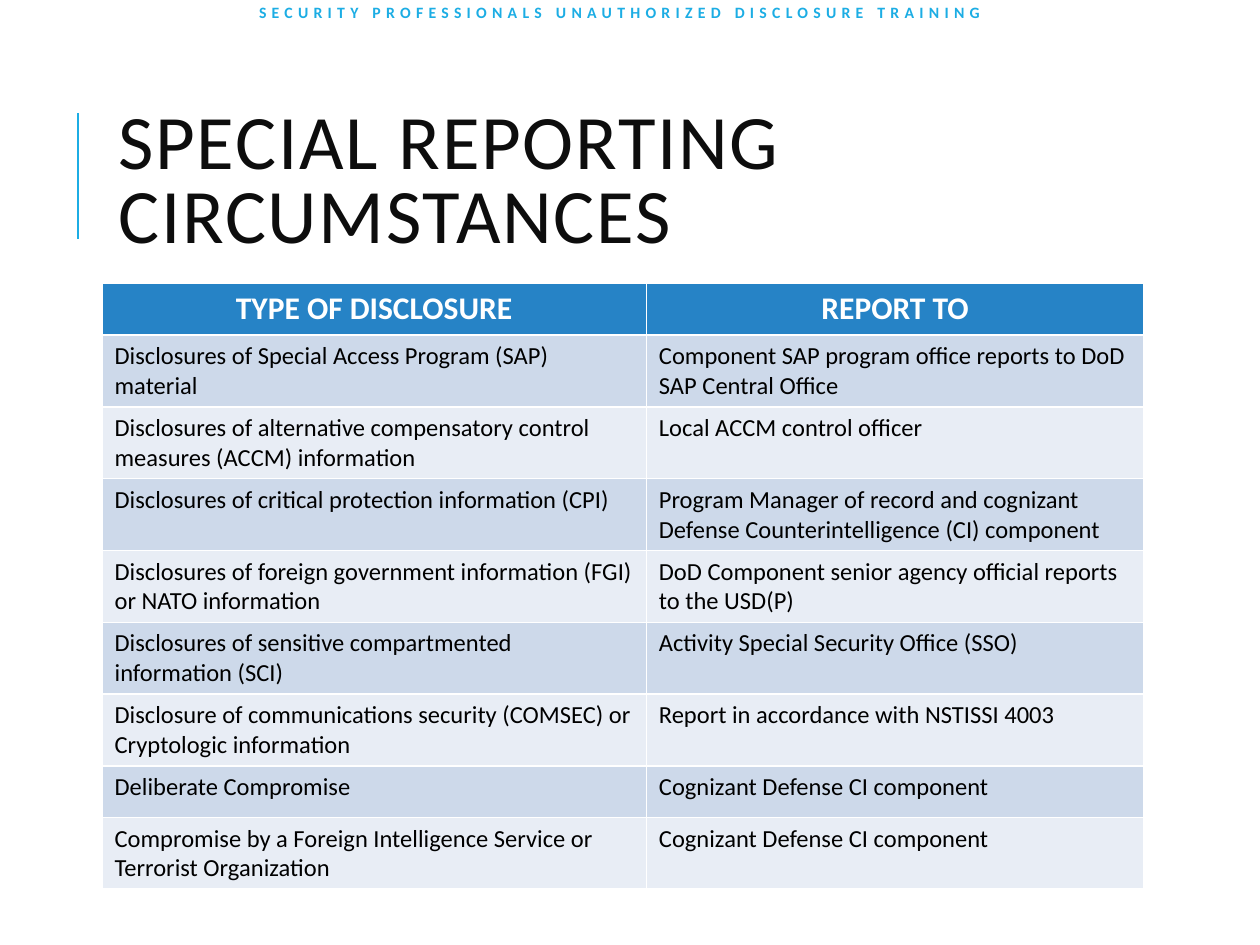
from lxml.etree import SubElement
from pptx import Presentation
from pptx.dml.color import RGBColor
from pptx.enum.shapes import MSO_CONNECTOR
from pptx.enum.text import MSO_ANCHOR, MSO_AUTO_SIZE, PP_ALIGN
from pptx.oxml.ns import qn
from pptx.util import Inches, Pt

COLORS = {
    "accent": "1CADE4",
    "head": "2683C6",
    "odd": "CDD9EA",
    "even": "E8EDF5",
    "title": "0D0D0D",
    "text": "000000",
    "white": "FFFFFF",
}

HEADS = ("TYPE OF DISCLOSURE", "REPORT TO")
ROWS = (
    ("Disclosures of Special Access Program (SAP) material",
     "Component SAP program office reports to DoD SAP Central Office"),
    ("Disclosures of alternative compensatory control measures (ACCM) information",
     "Local ACCM control officer"),
    ("Disclosures of critical protection information (CPI)",
     "Program Manager of record and cognizant Defense Counterintelligence (CI) component"),
    ("Disclosures of foreign government information (FGI) or NATO information",
     "DoD Component senior agency official reports to the USD(P)"),
    ("Disclosures of sensitive compartmented information (SCI)",
     "Activity Special Security Office (SSO)"),
    ("Disclosure of communications security (COMSEC) or Cryptologic information",
     "Report in accordance with NSTISSI 4003"),
    ("Deliberate Compromise", "Cognizant Defense CI component"),
    ("Compromise by a Foreign Intelligence Service or Terrorist Organization",
     "Cognizant Defense CI component"),
)
WIDTHS = (4.32, 3.95)
SHORT, TALL = 0.41, 0.57
HEIGHTS = (SHORT,) + (TALL,) * 6 + (SHORT, TALL)


def color(name):
    return RGBColor.from_string(COLORS[name])


class Deck:
    font = "Calibri"

    def __init__(self):
        self.file = Presentation()
        self.file.slide_width = Inches(10)
        self.file.slide_height = Inches(7.5)
        self.slide = self.file.slides.add_slide(self.file.slide_layouts[5])

    def label(self, para, text, size, tint, bold=False, space=0, align=PP_ALIGN.LEFT):
        para.alignment = align
        run = para.add_run()
        run.text = text
        run.font.name = self.font
        run.font.size = Pt(size)
        run.font.bold = bold
        run.font.color.rgb = color(tint)
        if space:
            run.font._element.set("spc", str(space * 100))

    def title(self, text, left, top, width, height):
        shape = self.slide.shapes.title
        shape.left, shape.top = Inches(left), Inches(top)
        shape.width, shape.height = Inches(width), Inches(height)
        frame = shape.text_frame
        frame.word_wrap = True
        frame.auto_size = MSO_AUTO_SIZE.NONE
        frame.vertical_anchor = MSO_ANCHOR.MIDDLE
        para = frame.paragraphs[0]
        para.line_spacing = 0.8
        self.label(para, text, 44, "title", space=1)

    def banner(self, text, left, top, width, height):
        box = self.slide.shapes.add_textbox(
            Inches(left), Inches(top), Inches(width), Inches(height))
        frame = box.text_frame
        frame.word_wrap = True
        frame.vertical_anchor = MSO_ANCHOR.BOTTOM
        frame.margin_left = frame.margin_right = 0
        frame.margin_top = frame.margin_bottom = 0
        self.label(frame.paragraphs[0], text, 9, "accent", True, 3, PP_ALIGN.CENTER)

    def rule(self, left, top, end):
        line = self.slide.shapes.add_connector(
            MSO_CONNECTOR.STRAIGHT, Inches(left), Inches(top), Inches(left), Inches(end))
        line.line.color.rgb = color("accent")
        line.line.width = Pt(1.5)
        SubElement(line._element.spPr, qn("a:effectLst"))

    def table(self, heads, rows, left, top, widths, heights):
        grid = self.slide.shapes.add_table(
            len(heights), len(widths), Inches(left), Inches(top),
            Inches(sum(widths)), Inches(sum(heights))).table
        for col, width in zip(grid.columns, widths):
            col.width = Inches(width)
        for row, height in zip(grid.rows, heights):
            row.height = Inches(height)
        for r, texts in enumerate((heads, *rows)):
            for c, text in enumerate(texts):
                cell = grid.cell(r, c)
                cell.fill.solid()
                para = cell.text_frame.paragraphs[0]
                if r == 0:
                    cell.fill.fore_color.rgb = color("head")
                    self.label(para, text, 18, "white", True, align=PP_ALIGN.CENTER)
                else:
                    cell.fill.fore_color.rgb = color("odd" if r % 2 else "even")
                    self.label(para, text, 14, "text")

    def save(self):
        self.file.save("out.pptx")


def main():
    deck = Deck()
    deck.rule(0.62, 0.9, 1.9)
    deck.banner("SECURITY PROFESSIONALS UNAUTHORIZED DISCLOSURE TRAINING",
                0.25, 0, 9.33, 0.17)
    deck.title("SPECIAL REPORTING CIRCUMSTANCES", 0.84, 0.64, 7.97, 1.64)
    deck.table(HEADS, ROWS, 0.81, 2.25, WIDTHS, HEIGHTS)
    deck.save()


if __name__ == "__main__":
    main()
